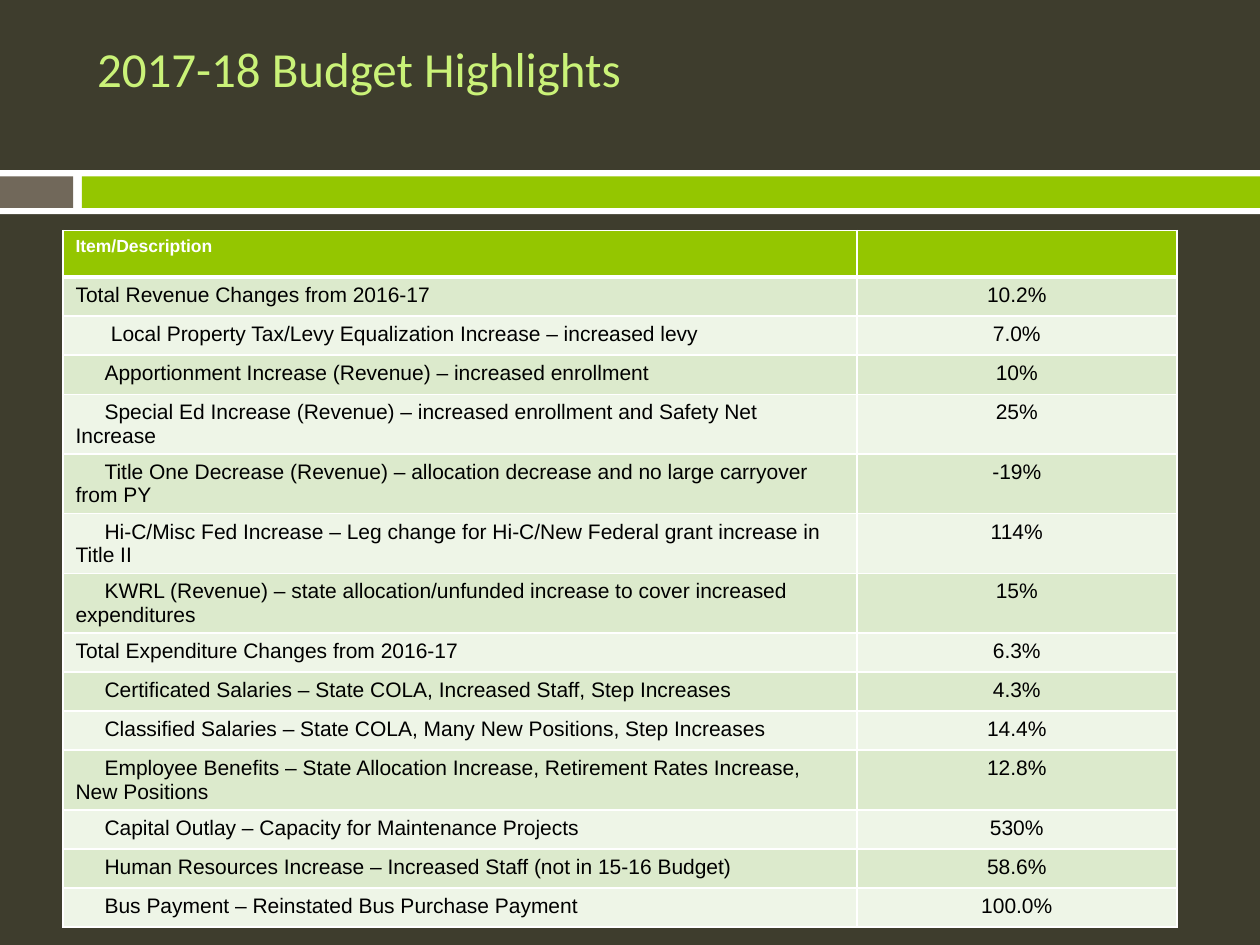
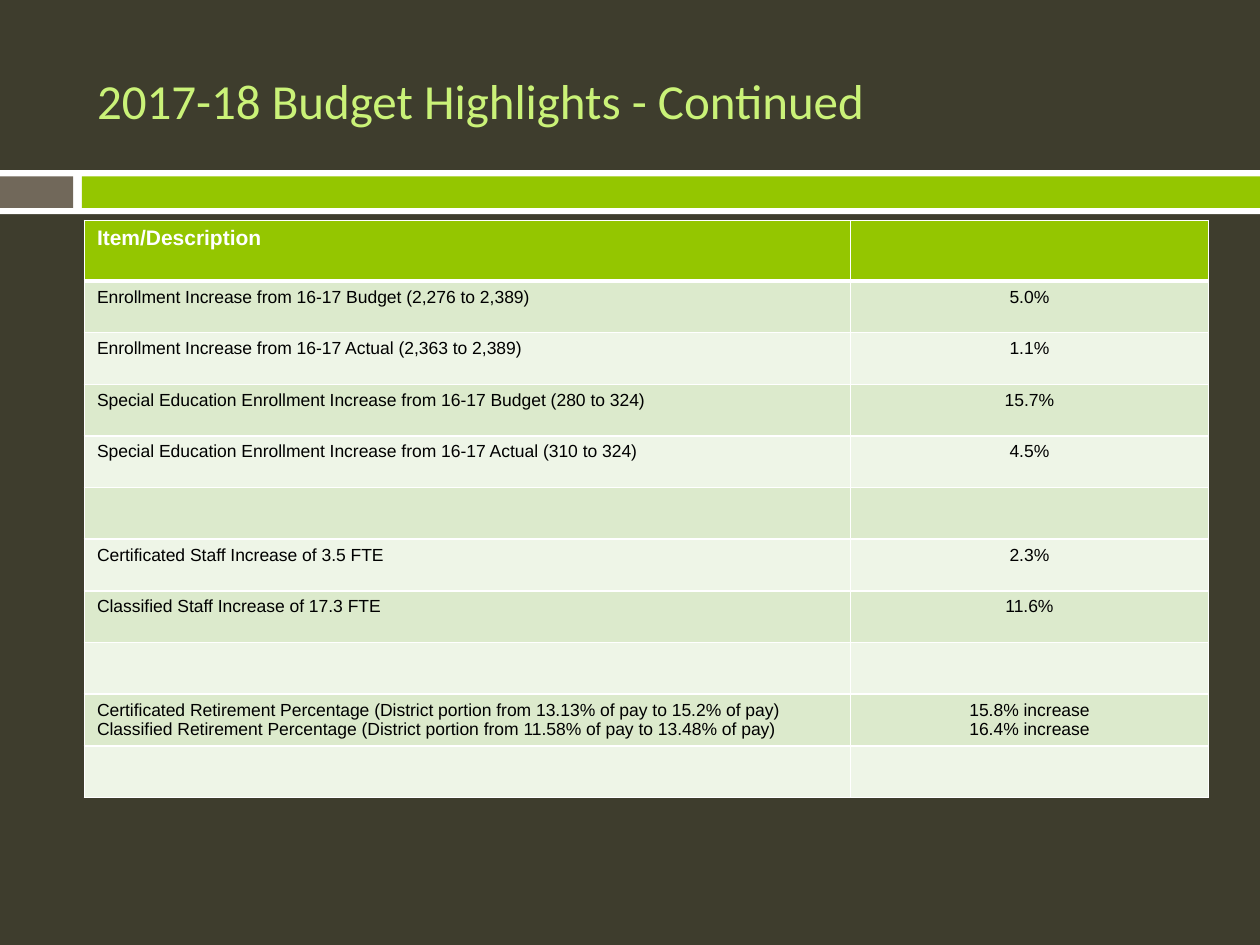
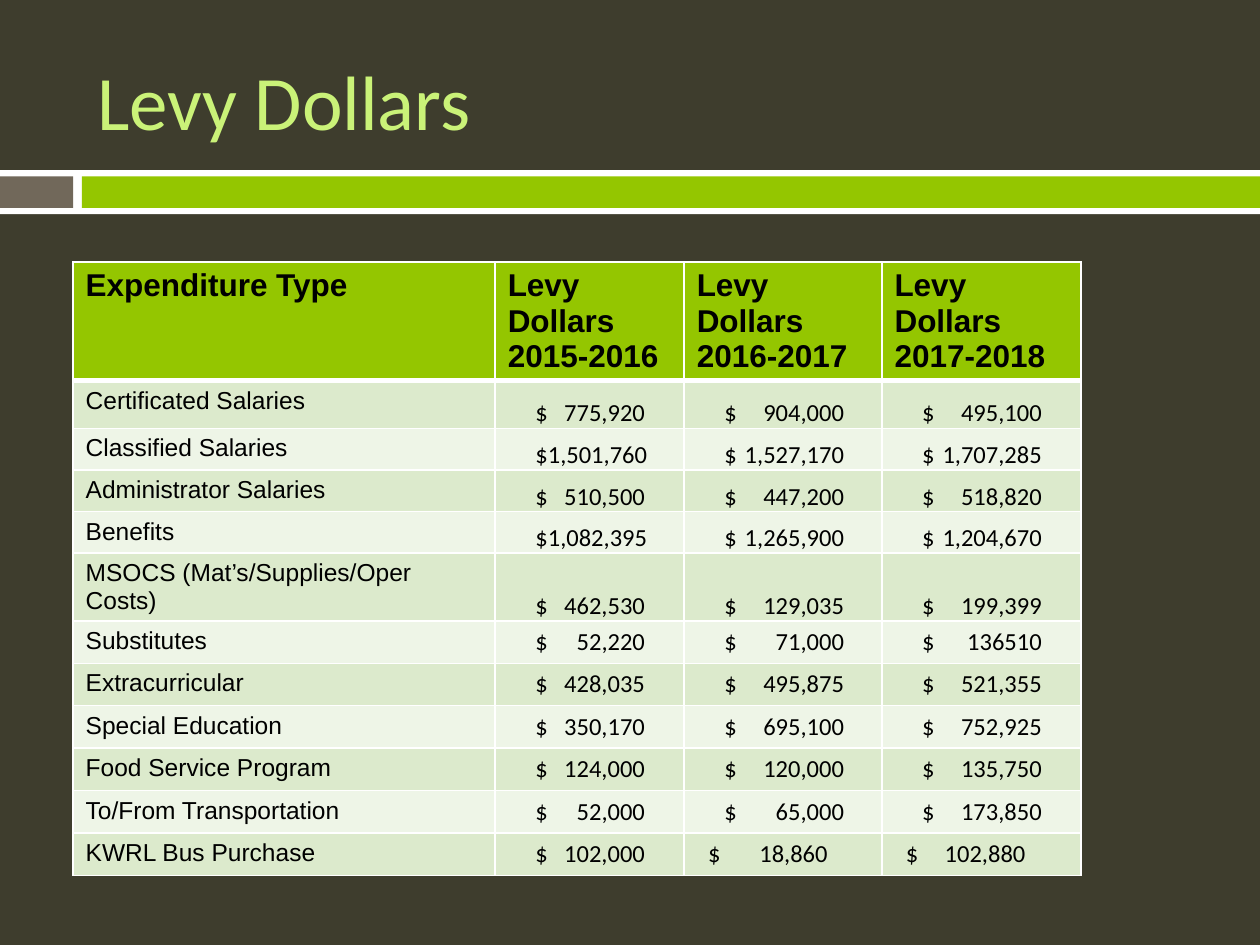
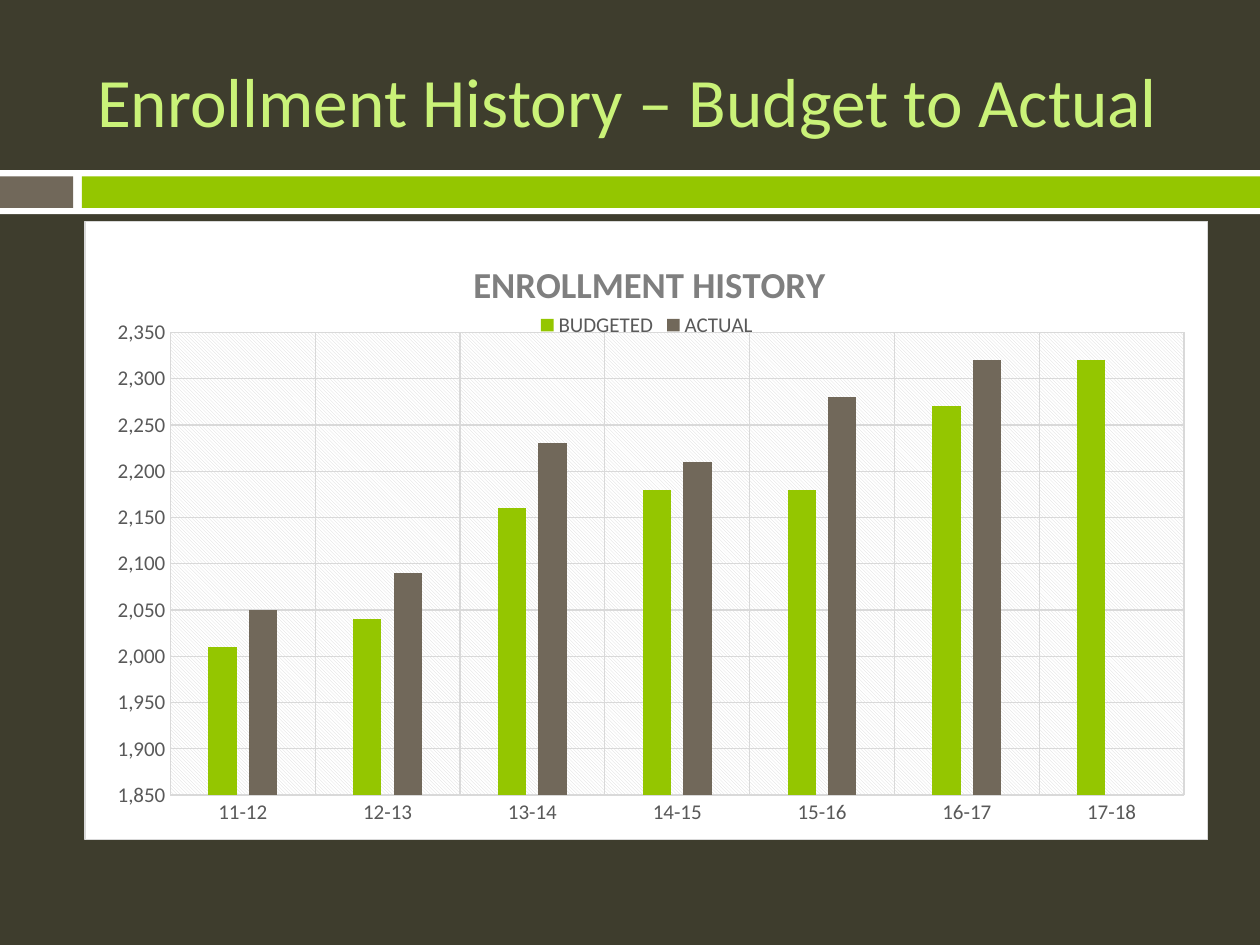
import pptx
import pptx.chart.data
import pptx.dml.color
import pptx.enum.chart
import pptx.enum.shapes
import pptx.enum.text
import pptx.oxml
import pptx.oxml.ns
import pptx.util
from lxml import etree

Inches, Pt = pptx.util.Inches, pptx.util.Pt
qn = pptx.oxml.ns.qn
ALIGN = pptx.enum.text.PP_ALIGN
ANCHOR = pptx.enum.text.MSO_ANCHOR

COLORS = {
    "back": "3E3D2D", "title": "CAF278", "green": "94C600", "brown": "71685A",
    "white": "FFFFFF", "black": "000000", "odd_row": "DCEACC", "even_row": "EEF5E7",
    "grid": "D9D9D9", "label": "595959", "chart_title": "7F7F7F",
}
BANDS = [(0, 1.35, 10, 0.35, "white"), (0, 1.4, 0.58, 0.25, "brown"),
         (0.65, 1.4, 9.35, 0.25, "green")]
INDENT = 0.23

# Rows of the first table: indent, item, change
CHANGES = [
    (0, "Total Revenue Changes from 2016-17", "10.2%"),
    (0.28, "Local Property Tax/Levy Equalization Increase – increased levy", "7.0%"),
    (INDENT, "Apportionment Increase (Revenue) – increased enrollment", "10%"),
    (INDENT, "Special Ed Increase (Revenue) – increased enrollment and Safety Net Increase", "25%"),
    (INDENT, "Title One Decrease (Revenue) – allocation decrease and no large carryover from PY", "-19%"),
    (INDENT, "Hi-C/Misc Fed Increase – Leg change for Hi-C/New Federal grant increase in Title II", "114%"),
    (INDENT, "KWRL (Revenue) – state allocation/unfunded increase to cover increased expenditures", "15%"),
    (0, "Total Expenditure Changes from 2016-17", "6.3%"),
    (INDENT, "Certificated Salaries – State COLA, Increased Staff, Step Increases", "4.3%"),
    (INDENT, "Classified Salaries – State COLA, Many New Positions, Step Increases", "14.4%"),
    (INDENT, "Employee Benefits – State Allocation Increase, Retirement Rates Increase, New Positions", "12.8%"),
    (INDENT, "Capital Outlay – Capacity for Maintenance Projects", "530%"),
    (INDENT, "Human Resources Increase – Increased Staff (not in 15-16 Budget)", "58.6%"),
    (INDENT, "Bus Payment – Reinstated Bus Purchase Payment", "100.0%"),
]
STAFFING = [
    ("Enrollment Increase from 16-17 Budget (2,276 to 2,389)", "5.0%"),
    ("Enrollment Increase from 16-17 Actual (2,363 to 2,389)", "1.1%"),
    ("Special Education Enrollment Increase from 16-17 Budget (280 to 324)", "15.7%"),
    ("Special Education Enrollment Increase from 16-17 Actual (310 to 324)", "4.5%"),
    ("", ""),
    ("Certificated Staff Increase of 3.5 FTE", "2.3%"),
    ("Classified Staff Increase of 17.3 FTE", "11.6%"),
    ("", ""),
    ("Certificated Retirement Percentage (District portion from 13.13% of pay to 15.2% of pay)\n"
     "Classified Retirement Percentage (District portion from 11.58% of pay to 13.48% of pay)",
     "15.8% increase\n16.4% increase"),
    ("", ""),
]
LEVY = [
    ("Certificated Salaries", "775,920", "904,000", "495,100"),
    ("Classified Salaries", "1,501,760", "1,527,170", "1,707,285"),
    ("Administrator Salaries", "510,500", "447,200", "518,820"),
    ("Benefits", "1,082,395", "1,265,900", "1,204,670"),
    ("MSOCS (Mat’s/Supplies/Oper Costs)", "462,530", "129,035", "199,399"),
    ("Substitutes", "52,220", "71,000", "136510"),
    ("Extracurricular", "428,035", "495,875", "521,355"),
    ("Special Education", "350,170", "695,100", "752,925"),
    ("Food Service Program", "124,000", "120,000", "135,750"),
    ("To/From Transportation", "52,000", "65,000", "173,850"),
    ("KWRL Bus Purchase", "102,000", "18,860", "102,880"),
]
YEARS = ["11-12", "12-13", "13-14", "14-15", "15-16", "16-17", "17-18"]
ENROLLMENT = [
    ("BUDGETED", [2010, 2040, 2160, 2180, 2180, 2270, 2320], "green"),
    ("ACTUAL", [2050, 2090, 2230, 2210, 2280, 2320, None], "brown"),
]


def rgb(name):
    return pptx.dml.color.RGBColor.from_string(COLORS[name])


def fill_solid(fill, color):
    fill.solid()
    fill.fore_color.rgb = rgb(color)


def set_font(font, size, color, name="Calibri", bold=False):
    font.size, font.name, font.bold = Pt(size), name, bold
    font.color.rgb = rgb(color)


def write_text(tf, text, size=12, color="black", name="Arial", bold=False,
               align=ALIGN.LEFT, indent=0, tab=None):
    for i, line in enumerate(text.split("\n")):
        p = tf.paragraphs[0] if i == 0 else tf.add_paragraph()
        p.alignment = align
        pPr = p._p.get_or_add_pPr()
        if indent:
            pPr.set("marL", "0")
            pPr.set("indent", str(Inches(indent)))
        if tab:
            tabs = etree.SubElement(pPr, qn("a:tabLst"))
            etree.SubElement(tabs, qn("a:tab"), pos=str(Inches(tab)), algn="r")
        if line:
            r = p.add_run()
            r.text = line
            set_font(r.font, size, color, name, bold)
        else:
            etree.SubElement(p._p, qn("a:endParaRPr"), sz=str(size * 100))


# Shared look: background and bands live on the master
def style_master(prs, s):
    master = prs.slide_master
    fill_solid(master.background.fill, "back")
    for i, (x, y, w, h, color) in enumerate(BANDS):
        sp = s.shapes.add_shape(pptx.enum.shapes.MSO_SHAPE.RECTANGLE,
                                Inches(x), Inches(y), Inches(w), Inches(h))
        sp.shadow.inherit = False
        fill_solid(sp.fill, color)
        sp.line.fill.background()
        sp._element.nvSpPr.cNvPr.set("id", str(100 + i))
        master.shapes._spTree.insert(2 + i, sp._element)


def add_slide(prs, title, size, height=1.08):
    s = prs.slides.add_slide(prs.slide_layouts[5])
    sp = s.shapes.title
    sp.left, sp.top, sp.width, sp.height = map(Inches, (0.67, 0.25, 8.92, height))
    sp.text_frame.word_wrap = True
    sp.text_frame.vertical_anchor = ANCHOR.MIDDLE
    write_text(sp.text_frame, title, size=size, color="title", name="Calibri")
    return s


def add_borders(cell, row):
    tcPr = cell._tc.get_or_add_tcPr()
    widths = {"lnL": 1, "lnR": 1, "lnT": 3 if row == 1 else 1, "lnB": 3 if row == 0 else 1}
    for side, width in widths.items():
        ln = etree.SubElement(tcPr, qn("a:" + side), w=str(Pt(width)))
        solid = etree.SubElement(ln, qn("a:solidFill"))
        etree.SubElement(solid, qn("a:srgbClr"), val=COLORS["white"])


def add_table(s, x, y, widths, heights):
    table = s.shapes.add_table(len(heights), len(widths), Inches(x), Inches(y),
                               Inches(sum(widths)), Inches(sum(heights))).table
    for column, width in zip(table.columns, widths):
        column.width = Inches(width)
    for i, height in enumerate(heights):
        table.rows[i].height = Inches(height)
        for cell in table.rows[i].cells:
            add_borders(cell, i)
            fill_solid(cell.fill, "green" if i == 0 else "odd_row" if i % 2 else "even_row")
    return table


def add_item_table(s, x, y, widths, heights, rows, head_size, size):
    table = add_table(s, x, y, widths, heights)
    for col, text in enumerate(("Item/Description", "")):
        write_text(table.cell(0, col).text_frame, text, size=head_size, color="white", bold=True)
    for i, (indent, item, change) in enumerate(rows, 1):
        write_text(table.cell(i, 0).text_frame, item, size=size, indent=indent)
        write_text(table.cell(i, 1).text_frame, change, size=size, align=ALIGN.CENTER)


def add_levy_table(s):
    table = add_table(s, 0.58, 2.08, [3.35, 1.5, 1.57, 1.58], [0.6, 0.38] + [0.33] * 10)
    heads = ["Expenditure Type"] + [f"Levy Dollars\n{y}-{y + 1}" for y in (2015, 2016, 2017)]
    for col, head in enumerate(heads):
        write_text(table.cell(0, col).text_frame, head, size=18, bold=True)
    for i, (kind, *amounts) in enumerate(LEVY, 1):
        write_text(table.cell(i, 0).text_frame, kind, size=14)
        for col, amount in enumerate(amounts, 1):
            cell = table.cell(i, col)
            # The last row sits a little further left in the later years
            shift = 0.13 if i == len(LEVY) and col > 1 else 0
            cell.margin_left, cell.margin_right = Inches(0.32 - shift), Inches(0.01)
            if i <= 5:
                cell.vertical_anchor = ANCHOR.BOTTOM
                cell.margin_top, cell.margin_bottom = Inches(0.01), 0
            tight = col == 1 and len(amount) > 7
            write_text(cell.text_frame, ("$" if tight else "$\t") + amount, size=14,
                       name="Calibri", tab=None if tight else 0.87 if col == 1 else 0.95)


# Chart parts
def make_layout(x, y, w=None, h=None):
    layout = etree.Element(qn("c:layout"))
    manual = etree.SubElement(layout, qn("c:manualLayout"))
    if w:
        etree.SubElement(manual, qn("c:layoutTarget"), val="inner")
    for tag in ("xMode", "yMode"):
        etree.SubElement(manual, qn("c:" + tag), val="edge")
    for tag, value in zip("xywh", (x, y, w, h)):
        if value:
            etree.SubElement(manual, qn("c:" + tag), val=str(value))
    return layout


def place_part(element, after, layout):
    for old in element.findall(qn("c:layout")):
        element.remove(old)
    if after is None:
        element.insert(0, layout)
    else:
        element.find(qn(after)).addnext(layout)


def make_area(fill, border):
    return pptx.oxml.parse_xml(
        f'<c:spPr {pptx.oxml.ns.nsdecls("c", "a")}>{fill}<a:ln w="9525">{border}</a:ln></c:spPr>')


def solid_xml(color):
    return f'<a:solidFill><a:srgbClr val="{COLORS[color]}"/></a:solidFill>'


def style_axis(axis):
    axis.major_tick_mark = axis.minor_tick_mark = pptx.enum.chart.XL_TICK_MARK.NONE
    axis.has_major_gridlines = True
    set_font(axis.tick_labels.font, 12, "label")
    for line in (axis.major_gridlines.format.line, axis.format.line):
        line.width = Pt(0.75)
        line.color.rgb = rgb("grid")


def add_enrollment_chart(s):
    data = pptx.chart.data.CategoryChartData(number_format="#,##0")
    data.categories = YEARS
    for name, values, _ in ENROLLMENT:
        data.add_series(name, values)
    chart = s.shapes.add_chart(pptx.enum.chart.XL_CHART_TYPE.COLUMN_CLUSTERED, Inches(0.67),
                               Inches(1.75), Inches(8.92), Inches(4.92), data).chart
    set_font(chart.font, 10, "white")

    # Columns
    plot = chart.plots[0]
    plot.gap_width, plot.overlap, plot.vary_by_categories = 267, -43, False
    for series, (_, _, color) in zip(plot.series, ENROLLMENT):
        fill_solid(series.format.fill, color)

    # Axes
    style_axis(chart.category_axis)
    axis = chart.value_axis
    style_axis(axis)
    axis.format.line.fill.background()
    axis.minimum_scale, axis.maximum_scale, axis.major_unit = 1850, 2350, 50
    axis.tick_labels.number_format = "#,##0"
    axis.tick_labels.number_format_is_linked = False

    # Title and legend
    chart.has_title = True
    write_text(chart.chart_title.text_frame, "ENROLLMENT HISTORY", size=21,
               color="chart_title", name="Calibri", bold=True, align=ALIGN.CENTER)
    place_part(chart.chart_title._element, "c:tx", make_layout(0.34, 0.05))
    chart.has_legend = True
    chart.legend.position = pptx.enum.chart.XL_LEGEND_POSITION.TOP
    chart.legend.include_in_layout = True
    set_font(chart.legend.font, 12, "label")
    place_part(chart.legend._element, "c:legendPos", make_layout(0.4, 0.14))

    # Plot area and chart background
    space = chart._chartSpace
    plot_area = space.chart.plotArea
    place_part(plot_area, None, make_layout(0.076, 0.18, 0.903, 0.748))
    pattern = (f'<a:pattFill prst="ltDnDiag"><a:fgClr><a:srgbClr val="{COLORS["grid"]}"/></a:fgClr>'
               f'<a:bgClr><a:srgbClr val="{COLORS["white"]}"/></a:bgClr></a:pattFill>')
    plot_area.append(make_area(pattern, "<a:noFill/>"))
    space.chart.addnext(make_area(solid_xml("white"), solid_xml("grid")))


def main():
    prs = pptx.Presentation()
    prs.slide_width, prs.slide_height = Inches(10), Inches(7.5)

    s = add_slide(prs, "2017-18 Budget Highlights", 28, height=0.58)
    style_master(prs, s)
    add_item_table(s, 0.5, 1.83, [6.3, 2.54], [0.37] + [0.31] * 14, CHANGES, 10, 12)

    s = add_slide(prs, "2017-18 Budget Highlights - Continued", 28)
    add_item_table(s, 0.67, 1.75, [6.08, 2.84], [0.48] + [0.41] * 10,
                   [(0, *row) for row in STAFFING], 12, 10)

    s = add_slide(prs, "Levy Dollars", 44)
    add_levy_table(s)

    s = add_slide(prs, "Enrollment History – Budget to Actual", 39.6)
    add_enrollment_chart(s)

    prs.save("out.pptx")


if __name__ == "__main__":
    main()
